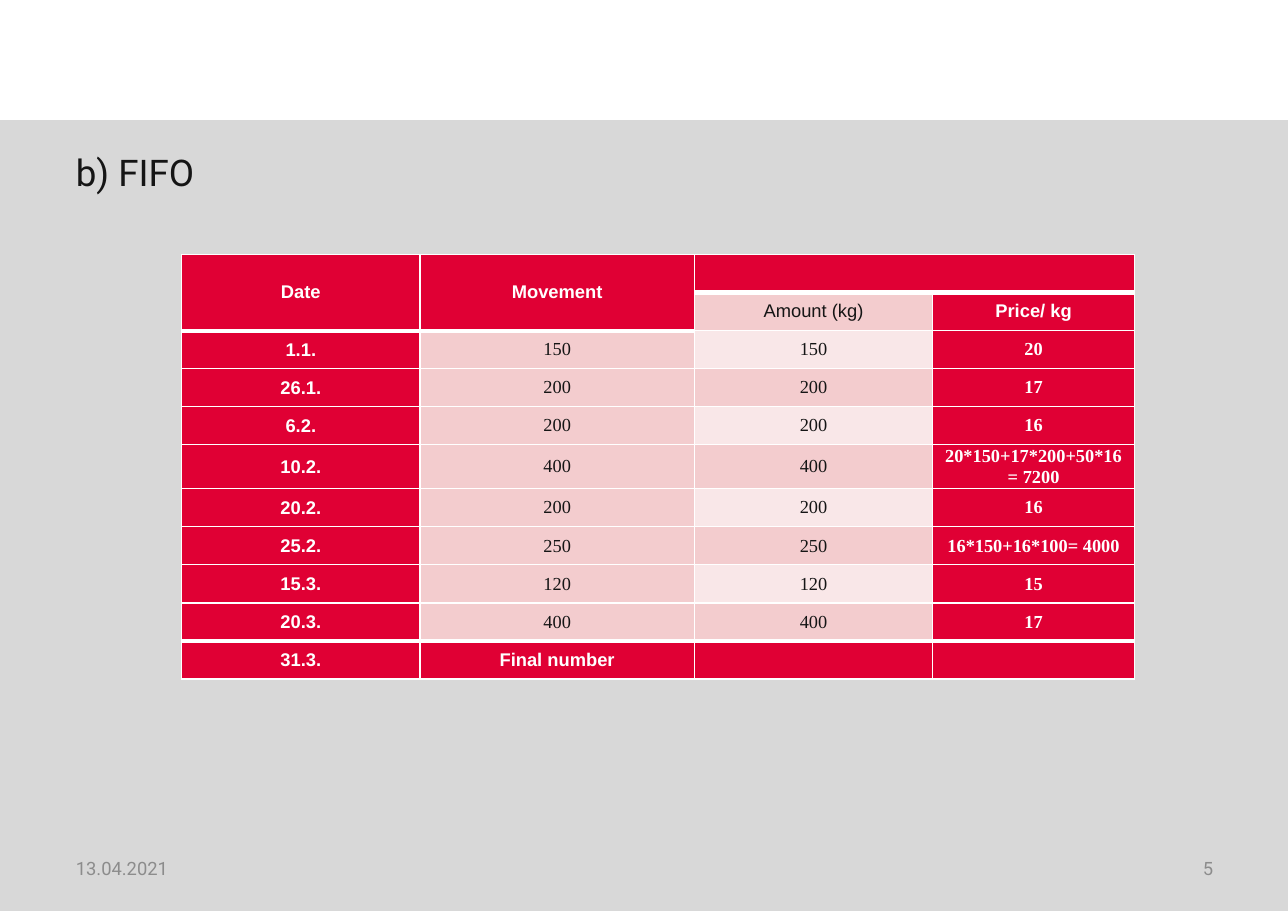
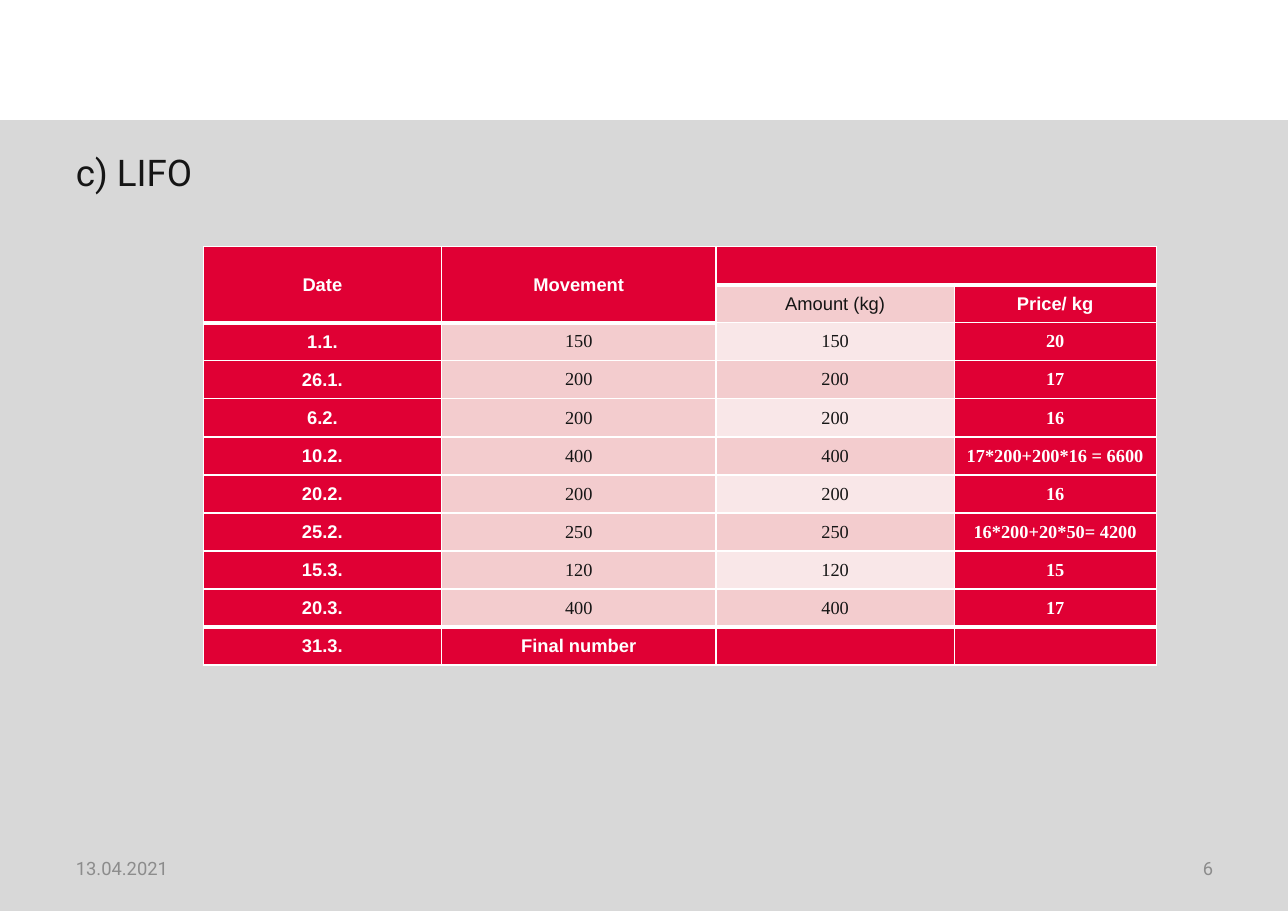
"""Build two slides with stock tables valued by FIFO and LIFO."""
from pptx import Presentation
from pptx.dml.color import RGBColor
from pptx.enum.shapes import MSO_SHAPE
from pptx.enum.text import MSO_ANCHOR, PP_ALIGN
from pptx.oxml import parse_xml
from pptx.oxml.ns import nsdecls
from pptx.util import Pt

RECT = MSO_SHAPE.RECTANGLE
TOP, MIDDLE = MSO_ANCHOR.TOP, MSO_ANCHOR.MIDDLE
LEFT, CENTER, RIGHT = PP_ALIGN.LEFT, PP_ALIGN.CENTER, PP_ALIGN.RIGHT

COLORS = {"band": "D8D8D8", "ink": "151515", "muted": "8C8C8C", "white": "FFFFFF",
          "red": "E00034", "pink": "F3CCCE", "pale": "F9E7E8"}
TITLE = {"name": "Roboto", "size": Pt(24)}
FOOTER = {"name": "Roboto", "size": Pt(12)}
MARGINS = {"margin_left": Pt(5), "margin_right": Pt(5), "margin_top": 0,
           "margin_bottom": 0, "vertical_anchor": MIDDLE}
PLAIN = {"first_row": False, "horz_banding": False}

WIDTH, HEIGHT, BAND = 841.7, 595.4, 78.5
EDGE, FOOT = 42.5, 551.5
COLS = [155.6, 179.5, 155.6, 132]
ROW = 24.87

MOVES = [("1.1.", "150"), ("26.1.", "200"), ("6.2.", "200"), ("10.2.", "400"),
         ("20.2.", "200"), ("25.2.", "250"), ("15.3.", "120"), ("20.3.", "400")]
SLIDES = [
    ("b) FIFO", "5", 118.8, 166.3,
     ["20", "17", "16", "20*150+17*200+50*16 = 7200", "16",
      "16*150+16*100= 4000", "15", "17"]),
    ("c) LIFO", "6", 132.9, 161.2,
     ["20", "17", "16", "17*200+200*16 = 6600", "16",
      "16*200+20*50= 4200", "15", "17"]),
]


def write(frame, text, style, color, align):
    para = frame.paragraphs[0]
    para.alignment = align
    run = para.add_run()
    run.text = text
    for key, value in style.items():
        setattr(run.font, key, value)
    run.font.color.rgb = RGBColor.from_string(COLORS[color])


def border(cell, widths):
    for side, width in widths.items():
        cell._tc.get_or_add_tcPr().append(parse_xml(
            f'<a:ln{side} {nsdecls("a")} w="{Pt(width)}"><a:solidFill>'
            f'<a:srgbClr val="{COLORS["white"]}"/></a:solidFill></a:ln{side}>'))


deck = Presentation()
deck.slide_width, deck.slide_height = Pt(WIDTH), Pt(HEIGHT)

for title, number, left, top, prices in SLIDES:
    slide = deck.slides.add_slide(deck.slide_layouts[6])
    band = slide.shapes.add_shape(RECT, 0, Pt(BAND), Pt(WIDTH), Pt(HEIGHT - BAND))
    band.shadow.inherit = False
    band.fill.solid()
    band.fill.fore_color.rgb = RGBColor.from_string(COLORS["band"])
    band.line.fill.background()

    labels = [
        (title, (EDGE, 94.5, 757.4, 44), TITLE, "ink", LEFT, TOP),
        ("13.04.2021", (EDGE, FOOT, 196.6, 31.7), FOOTER, "muted", LEFT, MIDDLE),
        (number, (603.3, FOOT, 196.6, 31.7), FOOTER, "muted", RIGHT, MIDDLE),
    ]
    for text, place, style, color, align, anchor in labels:
        frame = slide.shapes.add_textbox(*map(Pt, place)).text_frame
        frame.word_wrap = True
        frame.vertical_anchor = anchor
        write(frame, text, style, color, align)

    rows = [("Date", "Movement", "", ""), ("", "", "Amount (kg)", "Price/ kg")]
    rows += [(date, kilos, kilos, price) for (date, kilos), price in zip(MOVES, prices)]
    rows.append(("31.3.", "Final number", "", ""))
    last = len(rows) - 1
    table = slide.shapes.add_table(len(rows), len(COLS), Pt(left), Pt(top),
                                   Pt(sum(COLS)), Pt(ROW * len(rows))).table
    for key, value in PLAIN.items():
        setattr(table, key, value)
    for col, width in zip(table.columns, COLS):
        col.width = Pt(width)
    for row in table.rows:
        row.height = Pt(ROW)
    for start, end in [((0, 0), (1, 0)), ((0, 1), (1, 1)), ((0, 2), (0, 3))]:
        table.cell(*start).merge(table.cell(*end))

    thick = {(r, c) for r in (0, last - 1) for c in range(4)} | {(1, 0), (1, 1)}
    for r, row in enumerate(rows):
        for c, text in enumerate(row):
            cell = table.cell(r, c)
            for key, value in MARGINS.items():
                setattr(cell, key, value)
            border(cell, {"L": 1, "R": 1, "T": 3 if (r - 1, c) in thick else 1,
                          "B": 3 if (r, c) in thick else 1})
            strong = c in (0, 3) or r in (0, last)
            shade = "red" if strong else "pale" if c == 2 and r % 2 == 0 else "pink"
            cell.fill.solid()
            cell.fill.fore_color.rgb = RGBColor.from_string(COLORS[shade])
            if text:
                sans = c == 0 or r in (0, 1, last)
                style = {"name": "Arial" if sans else "Times New Roman",
                         "size": Pt(12), "bold": strong}
                write(cell.text_frame, text, style, "white" if strong else "ink", CENTER)

deck.save("out.pptx")
